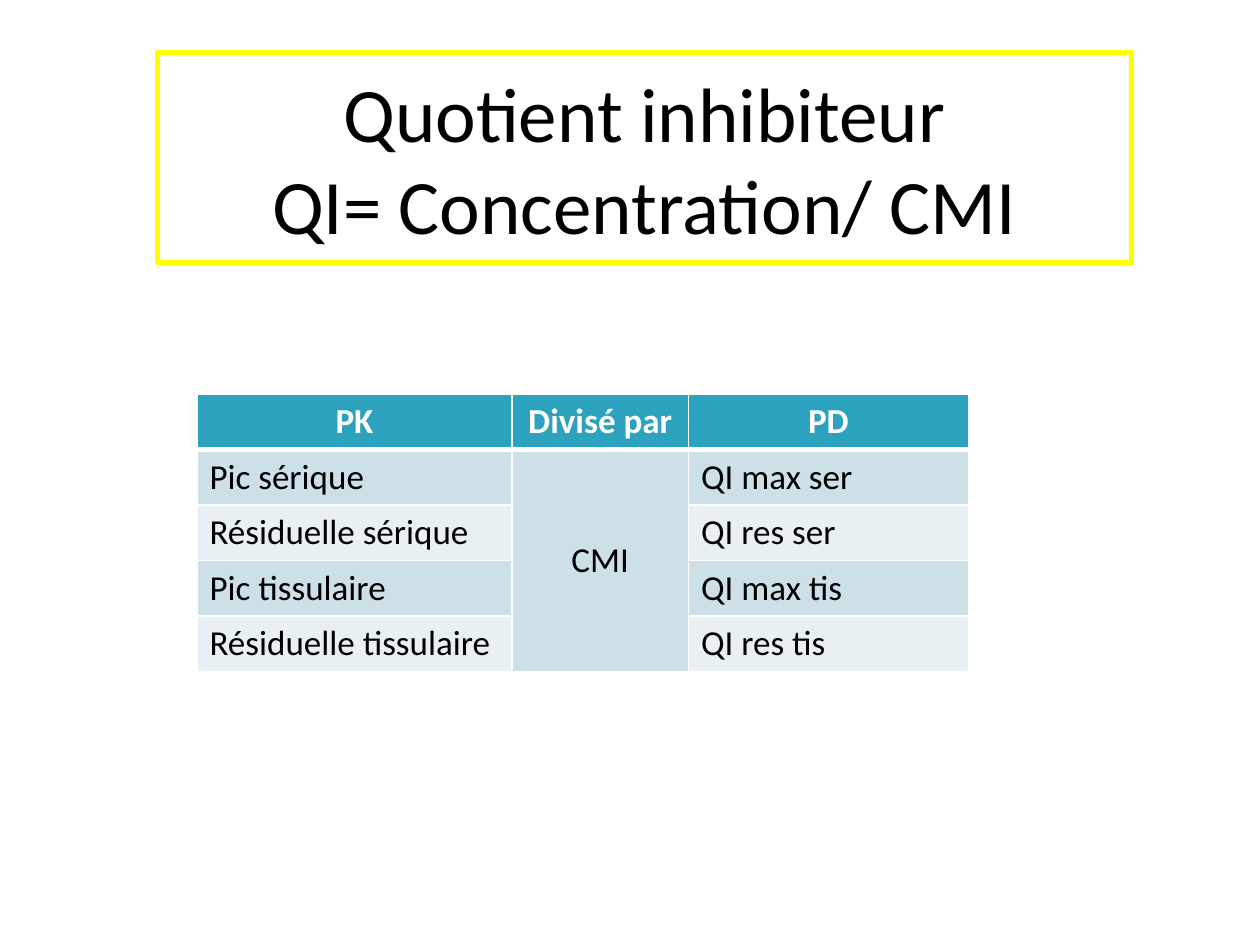
from pptx import Presentation
from pptx.dml.color import RGBColor as Rgb
from pptx.enum.text import MSO_ANCHOR as Anchor, MSO_AUTO_SIZE as Auto, PP_ALIGN as Align
from pptx.oxml import parse_xml
from pptx.oxml.ns import nsdecls
from pptx.util import Cm, Pt

FONT = "Calibri"
TITLE = ["Quotient inhibiteur", "QI= Concentration/ CMI"]
HEADS = ["PK", "Divisé par", "PD"]
ROWS = [
    ["Pic sérique", "CMI", "QI max ser"],
    ["Résiduelle sérique", "", "QI res ser"],
    ["Pic tissulaire", "", "QI max tis"],
    ["Résiduelle tissulaire", "", "QI res tis"],
]
COLS = [6.35, 3.56, 5.64]


def paint(part, tint):
    part.solid()
    part.fore_color.rgb = Rgb.from_string(tint)


def add_run(para, text, size, tint="000000", bold=False):
    run = para.add_run()
    run.text = text
    font = run.font
    font.name, font.size, font.bold = FONT, Pt(size), bold
    paint(font.fill, tint)


def add_edge(cell, side, width, tint="FFFFFF"):
    cell._tc.get_or_add_tcPr().append(parse_xml(
        f'<a:ln{side} {nsdecls("a")} w="{Pt(width)}"><a:solidFill>'
        f'<a:srgbClr val="{tint}"/></a:solidFill></a:ln{side}>'))


def add_title(slide, left, top, width, height):
    box = slide.shapes.title
    box.left, box.top, box.width, box.height = map(Cm, (left, top, width, height))
    paint(box.line.fill, "FFFF00")
    box.line.width = Pt(3)
    frame = box.text_frame
    frame.auto_size, frame.word_wrap = Auto.NONE, True
    frame.vertical_anchor = Anchor.MIDDLE
    para = frame.paragraphs[0]
    para.alignment = Align.CENTER
    for num, line in enumerate(TITLE):
        if num:
            para.add_line_break()
        add_run(para, line, 44)


def fill_cell(cell, text, row, col):
    head = row == 0
    for side in "LRTB":
        thick = (row, side) in [(0, "B"), (1, "T")]
        add_edge(cell, side, 3 if thick else 1)
    band = "CDE0E8" if row % 2 else "E8F0F4"
    paint(cell.fill, "2DA2BF" if head else band)
    if text:
        para = cell.text_frame.paragraphs[0]
        para.alignment = Align.CENTER if head or col == 1 else Align.LEFT
        add_run(para, text, 20, "FFFFFF" if head else "000000", head)


def add_grid(slide, left, top, width, height):
    data = [HEADS] + ROWS
    frame = slide.shapes.add_table(
        len(data), len(COLS), *map(Cm, (left, top, width, height)))
    table = frame.table
    for col, size in zip(table.columns, COLS):
        col.width = Cm(size)
    for row, texts in enumerate(data):
        for col, text in enumerate(texts):
            fill_cell(table.cell(row, col), text, row, col)
    mid = table.cell(1, 1)
    mid.merge(table.cell(len(ROWS), 1))
    mid.vertical_anchor = Anchor.MIDDLE


def main():
    deck = Presentation()
    deck.slide_width, deck.slide_height = Cm(25.4), Cm(19.05)
    slide = deck.slides.add_slide(deck.slide_layouts[5])
    add_title(slide, 3.18, 1.06, 19.63, 4.24)
    add_grid(slide, 3.97, 7.94, sum(COLS), 5.5)
    deck.save("out.pptx")


if __name__ == "__main__":
    main()
